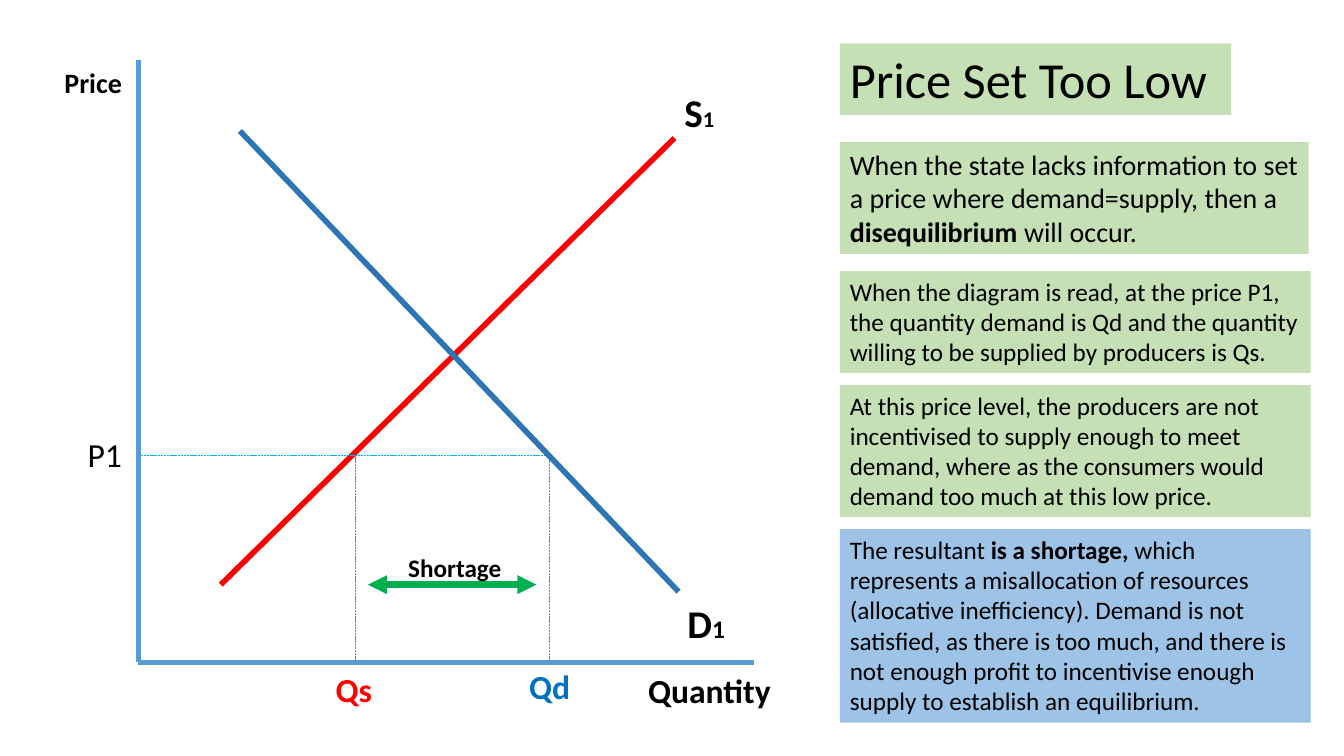
from dataclasses import dataclass

from lxml.etree import SubElement
from pptx import Presentation
from pptx.dml.color import RGBColor
from pptx.enum.dml import MSO_LINE
from pptx.enum.shapes import MSO_CONNECTOR, MSO_SHAPE
from pptx.enum.text import MSO_ANCHOR, MSO_AUTO_SIZE, PP_ALIGN
from pptx.oxml.ns import qn
from pptx.util import Inches, Pt


@dataclass(frozen=True)
class Theme:
    font: str = "Calibri"
    text: str = "000000"
    axis: str = "5B9BD5"
    supply: str = "FF0000"
    demand: str = "2E75B6"
    demand_label: str = "0070C0"
    guide: str = "00B0F0"
    shortage: str = "00B050"
    green_panel: str = "C5E0B4"
    blue_panel: str = "9DC3E6"
    title_size: int = 36
    curve_size: int = 28
    label_size: int = 24
    lead_size: int = 20
    body_size: int = 18
    subscript_size: int = 16


@dataclass(frozen=True)
class Box:
    left: float
    top: float
    width: float
    height: float

    def inside(self, left, top, width, height):
        return Box(self.left + left, self.top + top, width, height)

    def point(self, across, down):
        return Inches(self.left + across), Inches(self.top + down)

    def lengths(self):
        return [Inches(n) for n in (self.left, self.top, self.width, self.height)]


THEME = Theme()


def apply_format(target, values):
    for name, value in values.items():
        setattr(target, name, value)


def write_text(shape, runs, wrap, color=THEME.text):
    frame = shape.text_frame
    apply_format(frame, {
        "word_wrap": wrap,
        "auto_size": MSO_AUTO_SIZE.SHAPE_TO_FIT_TEXT,
        "vertical_anchor": MSO_ANCHOR.TOP,
    })
    paragraph = frame.paragraphs[0]
    paragraph.alignment = PP_ALIGN.LEFT
    for text, size, bold in runs:
        run = paragraph.add_run()
        run.text = text
        apply_format(run.font, {"name": THEME.font, "size": Pt(size), "bold": bold})
        run.font.color.rgb = RGBColor.from_string(color)


def add_label(slide, box, runs, color=THEME.text):
    write_text(slide.shapes.add_textbox(*box.lengths()), runs, False, color)


def add_panel(slide, box, fill, runs):
    shape = slide.shapes.add_shape(MSO_SHAPE.RECTANGLE, *box.lengths())
    shape.shadow.inherit = False
    shape.fill.solid()
    shape.fill.fore_color.rgb = RGBColor.from_string(fill)
    shape.line.fill.background()
    write_text(shape, runs, True)


def add_line(slide, box, start, end, color, width, dash=None, arrows=False):
    connector = slide.shapes.add_connector(
        MSO_CONNECTOR.STRAIGHT, *box.point(*start), *box.point(*end))
    line = connector.line
    line.color.rgb = RGBColor.from_string(color)
    apply_format(line, {"width": Pt(width), "dash_style": dash})
    if arrows:
        for tag in ("a:headEnd", "a:tailEnd"):
            SubElement(line._get_or_add_ln(), qn(tag), type="triangle")
    SubElement(connector._element.spPr, qn("a:effectLst"))


def build_diagram(slide, box):
    axis_x, axis_y = 0.83, 5.97
    price_y, supplied_x, demanded_x = 3.92, 2.98, 4.91
    shortage_y, arrow_gap = 5.2, 0.13
    supplied, demanded = (supplied_x, price_y), (demanded_x, price_y)

    for start, end in (
        ((axis_x, 0), (axis_x, axis_y)),
        ((axis_x, axis_y), (box.width - 0.28, axis_y)),
    ):
        add_line(slide, box, start, end, THEME.axis, 3.5)

    add_line(slide, box, (1.65, 5.2), (6.15, 0.77), THEME.supply, 4)
    for start, end in (
        ((axis_x, price_y), demanded),
        (supplied, (supplied_x, axis_y)),
        (demanded, (demanded_x, axis_y)),
    ):
        add_line(slide, box, start, end, THEME.guide, 0.5, MSO_LINE.SQUARE_DOT)
    add_line(slide, box, (6.19, 5.27), (1.84, 0.7), THEME.demand, 4)
    add_line(slide, box, (supplied_x + arrow_gap, shortage_y),
             (demanded_x - arrow_gap, shortage_y), THEME.shortage, 4.5, arrows=True)

    for place, text, size, bold, color in (
        ((0, 0, 0.78, 0.44), "Price", THEME.lead_size, True, THEME.text),
        ((5.79, 6, 1.43, 0.5), "Quantity", THEME.label_size, True, THEME.text),
        ((0.23, 3.66, 0.55, 0.5), "P1", THEME.label_size, False, THEME.text),
        ((2.69, 5.99, 0.57, 0.5), "Qs", THEME.label_size, True, THEME.supply),
        ((4.61, 5.96, 0.61, 0.5), "Qd", THEME.label_size, True, THEME.demand_label),
        ((3.41, 4.83, 1.13, 0.4), "Shortage", THEME.body_size, True, THEME.text),
    ):
        add_label(slide, box.inside(*place), [(text, size, bold)], color)

    for place, letter, subscript_size in (
        ((6.15, 0.23, 0.5, 0.57), "S", THEME.subscript_size),
        ((6.18, 5.3, 0.58, 0.57), "D", THEME.body_size),
    ):
        add_label(slide, box.inside(*place), [
            (letter, THEME.curve_size, True), ("1", subscript_size, True)])


def build_explanation(slide, box):
    lead, body = THEME.lead_size, THEME.body_size
    for top, width, height, fill, runs in (
        (0, 3.88, 0.71, THEME.green_panel,
         [("Price Set Too Low", THEME.title_size, False)]),
        (0.98, 4.65, 1.11, THEME.green_panel, [
            ("When the state lacks information to set a price where "
             "demand=supply, then a ", lead, False),
            ("disequilibrium ", lead, True),
            ("will occur.", lead, False)]),
        (2.26, box.width, 1.01, THEME.green_panel, [
            ("When the diagram is read, at the price P1, the quantity demand is "
             "Qd and the quantity willing to be supplied by producers is Qs.",
             body, False)]),
        (3.39, box.width, 1.31, THEME.green_panel, [
            ("At this price level, the producers are not incentivised to supply "
             "enough to meet demand, where as the consumers would demand too "
             "much at this low price.", body, False)]),
        (4.82, box.width, 1.92, THEME.blue_panel, [
            ("The resultant ", body, False),
            ("is a shortage, ", body, True),
            ("which represents a misallocation of resources (allocative "
             "inefficiency). Demand is not satisfied, as there is too much, and "
             "there is not enough profit to incentivise enough supply to "
             "establish an equilibrium.", body, False)]),
    ):
        add_panel(slide, box.inside(0, top, width, height), fill, runs)


def main():
    presentation = Presentation()
    apply_format(presentation, {
        "slide_width": Inches(13.33), "slide_height": Inches(7.5)})
    slide = presentation.slides.add_slide(presentation.slide_layouts[6])
    build_diagram(slide, Box(0.54, 0.6, 7.22, 6.5))
    build_explanation(slide, Box(8.33, 0.43, 4.67, 6.74))
    presentation.save("out.pptx")


if __name__ == "__main__":
    main()
